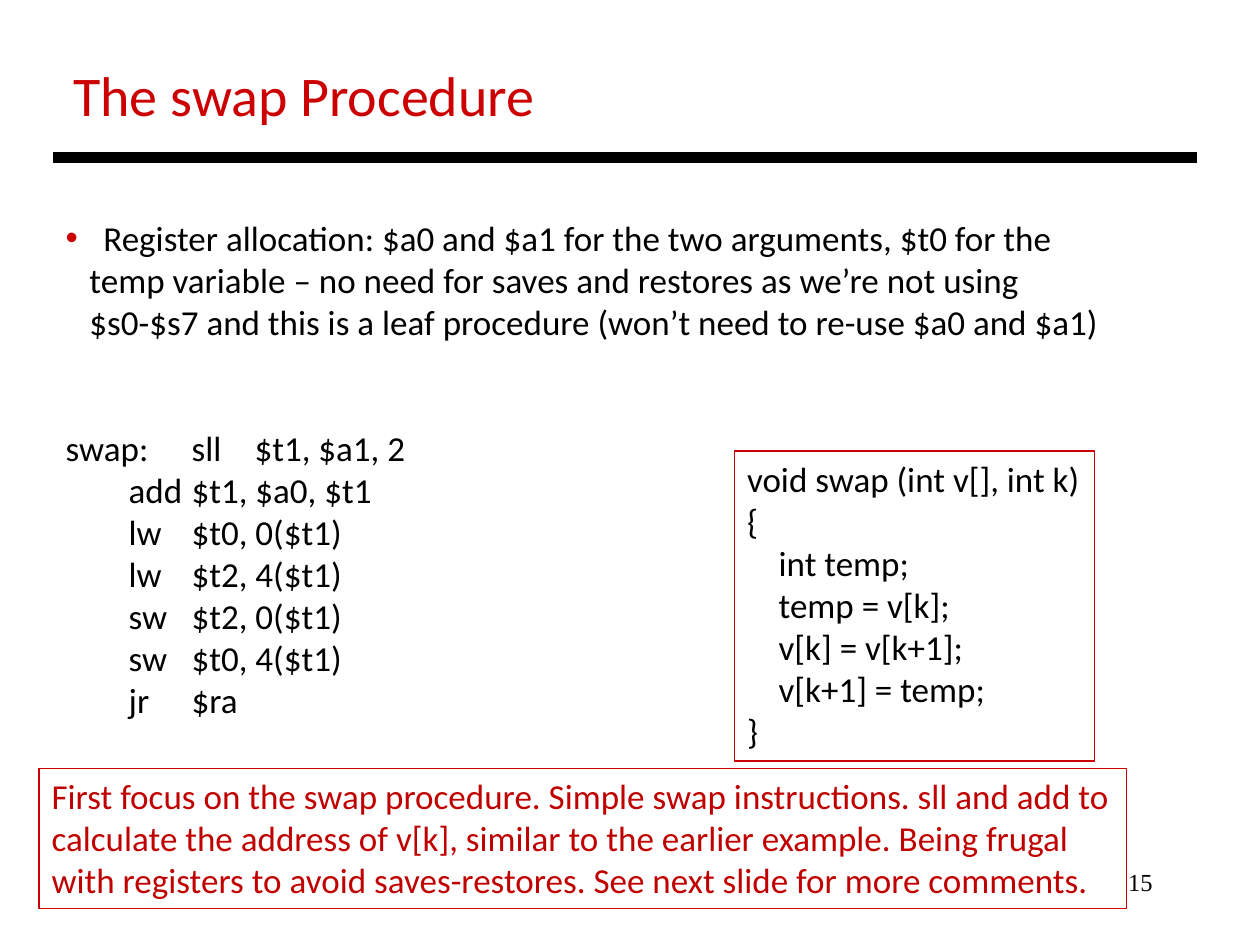
"""Build the slide that walks through the swap procedure."""
from lxml.etree import SubElement
from pptx import Presentation
from pptx.dml.color import RGBColor
from pptx.enum.shapes import MSO_CONNECTOR as Connector, MSO_SHAPE as Shape
from pptx.enum.text import MSO_ANCHOR as Anchor, MSO_AUTO_SIZE as AutoSize, PP_ALIGN as Align
from pptx.oxml.ns import qn
from pptx.util import Cm, Pt

RED = RGBColor(0xCC, 0x00, 0x00)
DARK_RED = RGBColor(0xC0, 0x00, 0x00)
BLACK = RGBColor(0x00, 0x00, 0x00)

ALLOCATION = [
    "Register allocation: $a0 and $a1 for the two arguments, $t0 for the",
    "temp variable – no need for saves and restores as we’re not using",
    "$s0-$s7 and this is a leaf procedure (won’t need to re-use $a0 and $a1)",
]
ASSEMBLY = [
    ("swap:", "sll", "$t1, $a1, 2"),
    ("", "add", "$t1, $a0, $t1"),
    ("", "lw", "$t0, 0($t1)"),
    ("", "lw", "$t2, 4($t1)"),
    ("", "sw", "$t2, 0($t1)"),
    ("", "sw", "$t0, 4($t1)"),
    ("", "jr", "$ra"),
]
C_CODE = """void swap (int v[], int k)
{
    int temp;
    temp = v[k];
    v[k] = v[k+1];
    v[k+1] = temp;
}"""
COMMENT = (
    "First focus on the swap procedure. Simple swap instructions. sll and add to "
    "calculate the address of v[k], similar to the earlier example. Being frugal "
    "with registers to avoid saves-restores. See next slide for more comments."
)


class SlideBuilder:
    """Hold the text style and the current slide."""

    font_name = "Calibri"
    text_size = 20
    column_stops = (Cm(2.24), Cm(3.73))

    def __init__(self, slide):
        self.slide = slide

    def place(self, shape, left, top, width, height):
        shape.left, shape.top = Cm(left), Cm(top)
        shape.width, shape.height = Cm(width), Cm(height)

    def format_text(self, frame, color, size=text_size, font_name=font_name, align=Align.LEFT):
        frame.auto_size = AutoSize.NONE
        frame.vertical_anchor = Anchor.TOP
        for paragraph in frame.paragraphs:
            paragraph.alignment = align
            for run in paragraph.runs:
                run.font.name = font_name
                run.font.size = Pt(size)
                run.font.color.rgb = color

    def set_indent(self, paragraph, margin, bullet=False):
        properties = paragraph._p.get_or_add_pPr()
        properties.set("marL", str(Cm(margin)))
        properties.set("indent", str(-Cm(margin) if bullet else 0))
        if bullet:
            color = SubElement(properties, qn("a:buClr"))
            SubElement(color, qn("a:srgbClr"), val=str(RED))
            SubElement(properties, qn("a:buFont"), typeface="Arial")
            SubElement(properties, qn("a:buChar"), char="•")
        else:
            SubElement(properties, qn("a:buNone"))

    def set_columns(self, paragraph):
        tabs = SubElement(paragraph._p.get_or_add_pPr(), qn("a:tabLst"))
        for stop in self.column_stops:
            SubElement(tabs, qn("a:tab"), pos=str(stop), algn="l")

    def title(self, text, *box):
        shape = self.slide.shapes.title
        self.place(shape, *box)
        shape.text_frame.text = text
        self.format_text(shape.text_frame, RED, 32)

    def body(self, points, code_rows, *box):
        shape = self.slide.placeholders[1]
        self.place(shape, *box)
        frame = shape.text_frame
        frame.text = "\n".join(points + ["\t".join(row) for row in code_rows])
        for index, paragraph in enumerate(frame.paragraphs):
            first_code_row = index == len(points)
            paragraph.space_before = Pt(48 if first_code_row else 0)
            if index < len(points):
                self.set_indent(paragraph, 0.48 if index else 0.76, bullet=index == 0)
            else:
                self.set_indent(paragraph, 0)
                self.set_columns(paragraph)
        self.format_text(frame, BLACK)

    def rule(self, left, right, y):
        line = self.slide.shapes.add_connector(
            Connector.STRAIGHT, Cm(left), Cm(y), Cm(right), Cm(y))
        line.line.color.rgb = BLACK
        line.line.width = Pt(6)
        SubElement(line._element.spPr, qn("a:effectLst"))

    def framed_text(self, text, color, *box, wrap=True):
        shape = self.slide.shapes.add_shape(Shape.RECTANGLE, *map(Cm, box))
        shape.shadow.inherit = False
        shape.fill.background()
        shape.line.color.rgb = RED
        shape.line.width = Pt(0.75)
        shape.text_frame.text = text
        shape.text_frame.word_wrap = wrap
        self.format_text(shape.text_frame, color)

    def page_number(self, number, *box):
        shape = self.slide.shapes.add_textbox(*map(Cm, box))
        shape.text_frame.text = str(number)
        shape.text_frame.word_wrap = True
        self.format_text(shape.text_frame, BLACK, 14, "Times New Roman", Align.RIGHT)


def main():
    presentation = Presentation()
    presentation.slide_width, presentation.slide_height = Cm(25.4), Cm(19.05)
    slide = presentation.slides.add_slide(presentation.slide_layouts[1])
    builder = SlideBuilder(slide)
    builder.page_number(15, 18.21, 17.35, 5.28, 1.27)
    builder.title("The swap Procedure", 1.22, 1.09, 9.91, 1.63)
    builder.rule(1.07, 24.13, 3.18)
    builder.body(ALLOCATION, ASSEMBLY, 1.07, 4.24, 22, 10.52)
    builder.framed_text(C_CODE, BLACK, 14.81, 9.09, 7.26, 6.25, wrap=False)
    builder.framed_text(COMMENT, DARK_RED, 0.79, 15.49, 21.92, 2.82)
    presentation.save("out.pptx")


if __name__ == "__main__":
    main()
